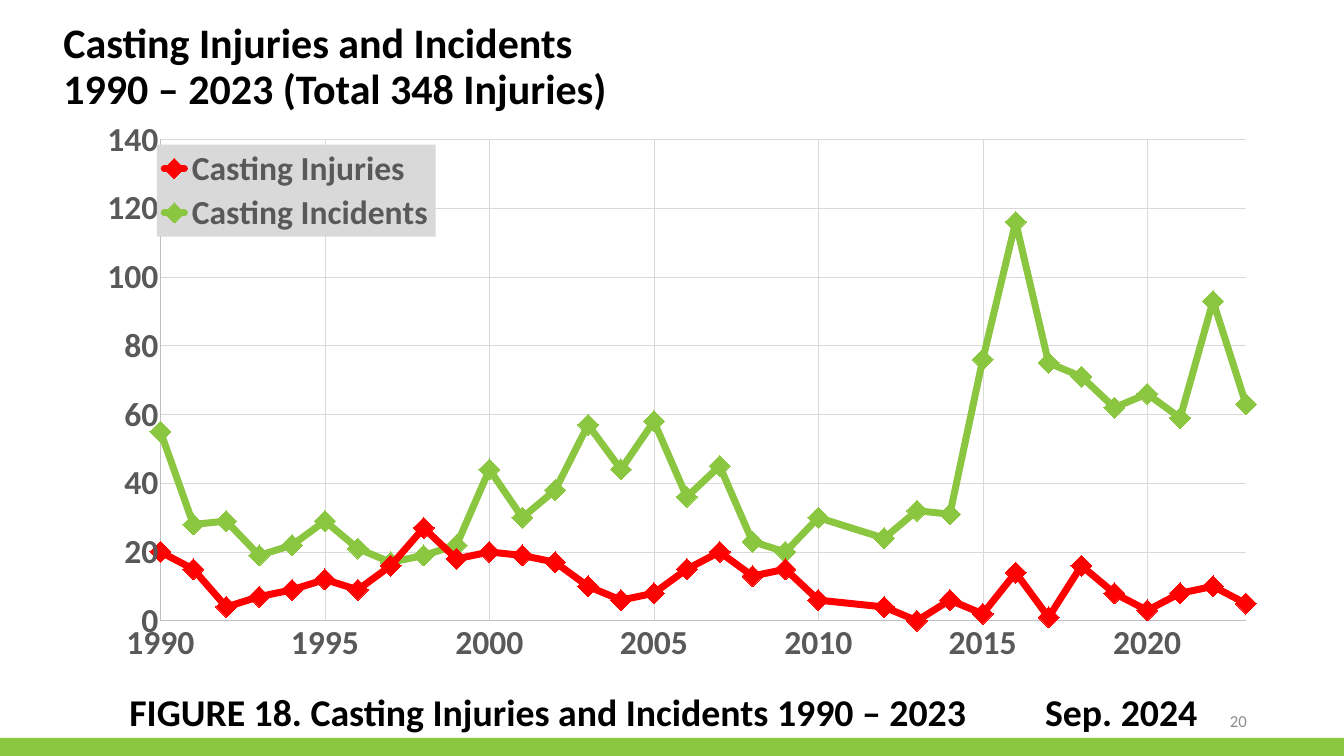
from lxml import etree
from pptx import Presentation
from pptx.chart.data import XyChartData
from pptx.dml.color import RGBColor
from pptx.enum.chart import (XL_CHART_TYPE, XL_LEGEND_POSITION, XL_MARKER_STYLE,
                             XL_TICK_LABEL_POSITION, XL_TICK_MARK)
from pptx.enum.shapes import MSO_SHAPE
from pptx.enum.text import MSO_ANCHOR, PP_ALIGN
from pptx.oxml import parse_xml
from pptx.oxml.ns import nsdecls, qn
from pptx.util import Inches, Pt

COLORS = {"green": "8BC641", "red": "FF0000", "black": "000000", "label": "595959",
          "axis": "BFBFBF", "grid": "D9D9D9", "number": "8C8C8C"}
FONT = "Calibri"
YEARS = [y for y in range(1990, 2024) if y != 2011]
SERIES = [
    ("Casting Injuries", "red",
     [20, 15, 4, 7, 9, 12, 9, 16, 27, 18, 20, 19, 17, 10, 6, 8, 15, 20, 13, 15, 6,
      4, 0, 6, 2, 14, 1, 16, 8, 3, 8, 10, 5]),
    ("Casting Incidents", "green",
     [55, 28, 29, 19, 22, 29, 21, 17, 19, 22, 44, 30, 38, 57, 44, 58, 36, 45, 23, 20, 30,
      24, 32, 31, 76, 116, 75, 71, 62, 66, 59, 93, 63]),
]


def rgb(name):
    return RGBColor.from_string(COLORS[name])


def set_font(font, size, color, bold=True):
    font.name, font.size, font.bold = FONT, Pt(size), bold
    font.color.rgb = rgb(color)


def set_line(line, color, width):
    line.color.rgb = rgb(color)
    line.width = Pt(width)


def add_text(slide, box, lines, size, color="black", bold=True, spacing=0.9,
             align=PP_ALIGN.LEFT, anchor=MSO_ANCHOR.TOP):
    tf = slide.shapes.add_textbox(*map(Inches, box)).text_frame
    tf.word_wrap = True
    tf.vertical_anchor = anchor
    for i, line in enumerate(lines):
        p = tf.paragraphs[0] if i == 0 else tf.add_paragraph()
        p.alignment, p.line_spacing = align, spacing
        r = p.add_run()
        r.text = line
        set_font(r.font, size, color, bold)
    return tf


def add_caption(slide, box):
    tf = add_text(slide, box, ["FIGURE 18. Casting Injuries and Incidents 1990 – 2023\tSep. 2024"], 54)
    pPr = tf.paragraphs[0]._p.get_or_add_pPr()
    tabs = etree.SubElement(pPr, qn("a:tabLst"))
    etree.SubElement(tabs, qn("a:tab"), pos=str(Inches(18.17)), algn="l")


def add_bottom_band(slide, box):
    sp = slide.shapes.add_shape(MSO_SHAPE.RECTANGLE, *map(Inches, box))
    sp.shadow.inherit = False
    sp.fill.solid()
    sp.fill.fore_color.rgb = rgb("green")
    sp.line.fill.background()


def manual_layout(x, y, w, h, inner=False):
    """Return a c:layout element with fractions of the chart area."""
    target = '<c:layoutTarget val="inner"/>' if inner else ""
    return parse_xml(
        f'<c:layout {nsdecls("c")}><c:manualLayout>{target}'
        '<c:xMode val="edge"/><c:yMode val="edge"/>'
        f'<c:x val="{x}"/><c:y val="{y}"/><c:w val="{w}"/><c:h val="{h}"/>'
        '</c:manualLayout></c:layout>')


def style_axis(axis, low, high, unit):
    axis.minimum_scale, axis.maximum_scale, axis.major_unit = low, high, unit
    axis.major_tick_mark = axis.minor_tick_mark = XL_TICK_MARK.NONE
    axis.tick_label_position = XL_TICK_LABEL_POSITION.NEXT_TO_AXIS
    axis.tick_labels.number_format = "General"
    axis.tick_labels.number_format_is_linked = False
    set_font(axis.tick_labels.font, 48, "label")
    set_line(axis.format.line, "axis", 0.75)
    axis.has_major_gridlines = True
    set_line(axis.major_gridlines.format.line, "grid", 0.75)


def style_series(series, color):
    series.smooth = False
    set_line(series.format.line, color, 10)
    series.format.line._get_or_add_ln().set("cap", "rnd")
    marker = series.marker
    marker.style, marker.size = XL_MARKER_STYLE.DIAMOND, 30
    marker.format.fill.solid()
    marker.format.fill.fore_color.rgb = rgb(color)
    set_line(marker.format.line, color, 0.75)


def style_legend(chart):
    chart.has_legend = True
    legend = chart.legend
    legend.position = XL_LEGEND_POSITION.BOTTOM
    legend.include_in_layout = False
    set_font(legend.font, 48, "label")
    el = legend._element
    for layout in el.findall(qn("c:layout")):
        el.remove(layout)
    el.find(qn("c:legendPos")).addnext(manual_layout(0.07, 0.05, 0.23, 0.16))
    el.find(qn("c:overlay")).addnext(parse_xml(
        f'<c:spPr {nsdecls("c", "a")}><a:solidFill><a:srgbClr val="{COLORS["grid"]}"/>'
        '</a:solidFill><a:ln><a:noFill/></a:ln></c:spPr>'))


def add_casting_chart(slide, box):
    data = XyChartData()
    for name, _, values in SERIES:
        series = data.add_series(name)
        for year, value in zip(YEARS, values):
            series.add_data_point(year, value)
    chart = slide.shapes.add_chart(
        XL_CHART_TYPE.XY_SCATTER_LINES, *map(Inches, box), data).chart
    chart.has_title = False
    set_font(chart.font, 10, "black", bold=False)
    style_axis(chart.category_axis, 1990, 2023, 5)
    style_axis(chart.value_axis, 0, 140, 20)
    plot = chart.plots[0]
    plot.vary_by_categories = False
    for series, (_, color, _) in zip(plot.series, SERIES):
        style_series(series, color)
    style_legend(chart)
    area = chart._chartSpace.chart.plotArea
    for layout in area.findall(qn("c:layout")):
        area.remove(layout)
    area.insert(0, manual_layout(0.073, 0.041, 0.896, 0.837, inner=True))


def main():
    prs = Presentation()
    prs.slide_width, prs.slide_height = Inches(26.67), Inches(15)
    slide = prs.slides.add_slide(prs.slide_layouts[6])
    add_bottom_band(slide, (0, 14.64, 26.67, 0.36))
    add_text(slide, (18.84, 13.9, 6, 0.8), ["20"], 24, "number", bold=False, spacing=1.0,
             align=PP_ALIGN.RIGHT, anchor=MSO_ANCHOR.MIDDLE)
    add_text(slide, (1.16, 0.4, 18.8, 1.39),
             ["Casting Injuries and Incidents", "1990 – 2023 (Total 348 Injuries)"], 60)
    add_caption(slide, (2.47, 13.71, 23.25, 1))
    add_casting_chart(slide, (1.43, 2.3, 24.04, 11.41))
    prs.save("out.pptx")


if __name__ == "__main__":
    main()
